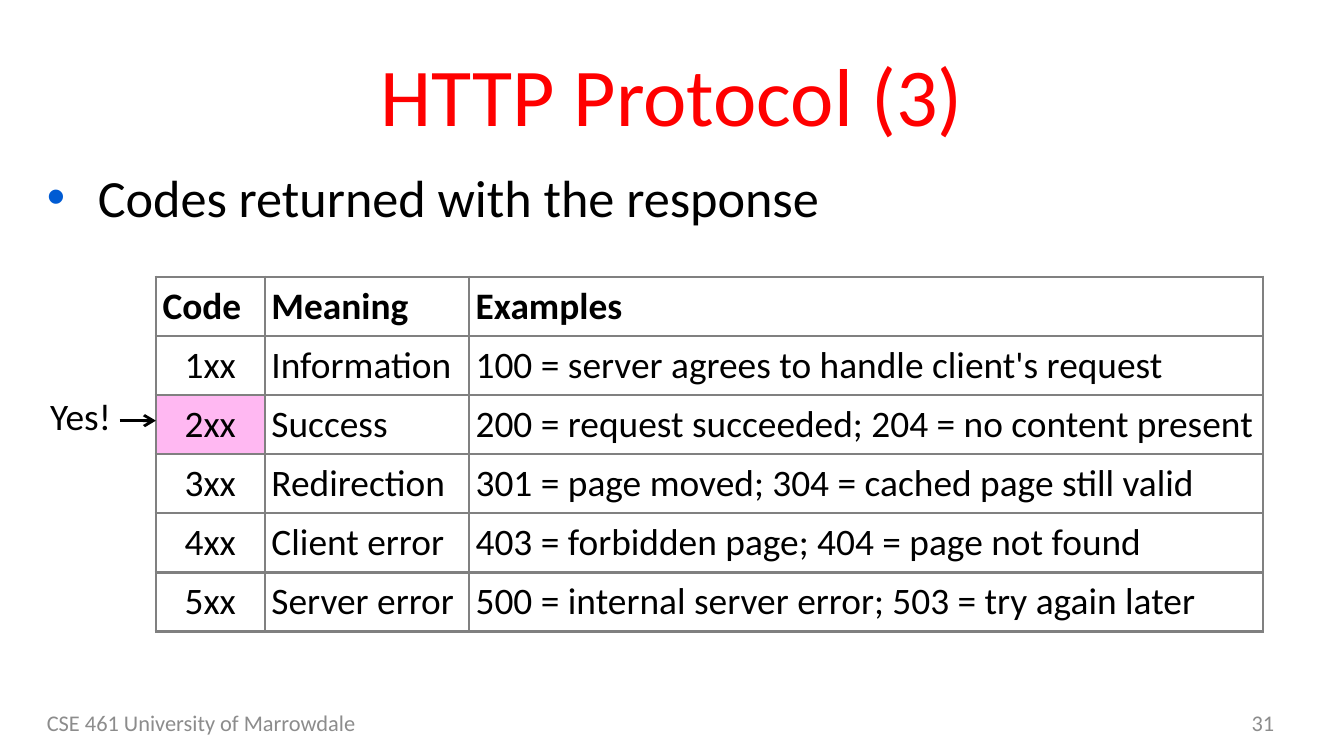
import pptx
import pptx.dml.color
import pptx.enum.shapes
import pptx.enum.text
import pptx.oxml
import pptx.oxml.ns
import pptx.util

Inches = pptx.util.Inches
Pt = pptx.util.Pt
RGBColor = pptx.dml.color.RGBColor
ALIGN = pptx.enum.text.PP_ALIGN
ANCHOR = pptx.enum.text.MSO_ANCHOR

FONT = "Calibri"
RED = RGBColor(0xFF, 0x00, 0x00)
BLACK = RGBColor(0x00, 0x00, 0x00)
GRAY = RGBColor(0x8C, 0x8C, 0x8C)
BULLET_BLUE = RGBColor(0x00, 0x5B, 0xD3)
BORDER_GRAY = RGBColor(0x80, 0x80, 0x80)
PINK = RGBColor(0xFF, 0xB8, 0xF2)

SLIDE_WIDTH = Inches(10)
SLIDE_HEIGHT = SLIDE_WIDTH * 9 // 16
COLUMN_WIDTHS = (0.81, 1.52, 5.91)
ROW_HEIGHT = 0.44
HIGHLIGHTED_CODE = "2xx"
RESPONSE_CODES = (
    ("Code", "Meaning", "Examples"),
    ("1xx", "Information", "100 = server agrees to handle client's request"),
    ("2xx", "Success", "200 = request succeeded; 204 = no content present"),
    ("3xx", "Redirection", "301 = page moved; 304 = cached page still valid"),
    ("4xx", "Client error", "403 = forbidden page; 404 = page not found"),
    ("5xx", "Server error", "500 = internal server error; 503 = try again later"),
)


def add_xml(parent, markup):
    """Append a DrawingML element to the parent."""
    root, rest = markup.split(" ", 1)
    parent.append(pptx.oxml.parse_xml(f"{root} {pptx.oxml.ns.nsdecls('a')} {rest}"))


def write(paragraph, text, size, color=BLACK, align=ALIGN.LEFT, bold=False):
    """Add one formatted run to a paragraph."""
    paragraph.alignment = align
    run = paragraph.add_run()
    run.text = text
    run.font.name = FONT
    run.font.size = Pt(size)
    run.font.bold = bold
    run.font.color.rgb = color


def add_text(slide, box, text, size, color=BLACK, align=ALIGN.LEFT, anchor=ANCHOR.MIDDLE):
    """Place a wrapped text box and return its paragraph."""
    frame = slide.shapes.add_textbox(*map(Inches, box)).text_frame
    frame.word_wrap = True
    frame.vertical_anchor = anchor
    paragraph = frame.paragraphs[0]
    write(paragraph, text, size, color, align)
    return paragraph


def add_body(slide, box):
    """Place the bulleted statement."""
    statement = add_text(slide, box, "Codes returned with the response", 28, anchor=ANCHOR.TOP)
    statement.space_before = Pt(6)
    properties = statement._p.get_or_add_pPr()
    properties.set("marL", str(Inches(0.38)))
    properties.set("indent", str(Inches(-0.38)))
    add_xml(properties, f'<a:buClr ><a:srgbClr val="{BULLET_BLUE}"/></a:buClr>')
    add_xml(properties, '<a:buFont typeface="Arial"/>')
    add_xml(properties, '<a:buChar char="•"/>')


def format_cell(cell, fill_color):
    """Set the margins, borders and fill of a table cell."""
    cell.margin_left = cell.margin_right = Inches(0.05)
    cell.margin_top = cell.margin_bottom = Inches(0.05)
    cell.vertical_anchor = ANCHOR.MIDDLE
    properties = cell._tc.get_or_add_tcPr()
    for side in "LRTB":
        add_xml(properties, f'<a:ln{side} w="{Pt(1.5)}"><a:solidFill>'
                            f'<a:srgbClr val="{BORDER_GRAY}"/></a:solidFill></a:ln{side}>')
    if fill_color is None:
        cell.fill.background()
    else:
        cell.fill.solid()
        cell.fill.fore_color.rgb = fill_color


def add_code_table(slide, left, top):
    """Place the table of response codes."""
    table = slide.shapes.add_table(
        len(RESPONSE_CODES), len(COLUMN_WIDTHS), Inches(left), Inches(top),
        Inches(sum(COLUMN_WIDTHS)), Inches(ROW_HEIGHT * len(RESPONSE_CODES))).table
    table.horz_banding = False
    table.first_row = False
    for column, width in zip(table.columns, COLUMN_WIDTHS):
        column.width = Inches(width)
    for row_index, entries in enumerate(RESPONSE_CODES):
        table.rows[row_index].height = Inches(ROW_HEIGHT)
        is_header = row_index == 0
        for column_index, text in enumerate(entries):
            cell = table.cell(row_index, column_index)
            is_code = column_index == 0 and not is_header
            write(cell.text_frame.paragraphs[0], text, 20,
                  align=ALIGN.CENTER if is_code else ALIGN.LEFT, bold=is_header)
            format_cell(cell, PINK if text == HIGHLIGHTED_CODE else None)


def add_callout(slide, left, top, width, height):
    """Place the label and the arrow pointing at the success code."""
    label = add_text(slide, (left, top, width, height), "Yes!", 20,
                     align=ALIGN.CENTER, anchor=ANCHOR.TOP)
    label.line_spacing = 0.8
    middle = Inches(top + height / 2)
    arrow = slide.shapes.add_connector(
        pptx.enum.shapes.MSO_CONNECTOR.STRAIGHT,
        Inches(left + 0.72), middle, Inches(left + 0.99), middle)
    arrow.line.color.rgb = BLACK
    arrow.line.width = Pt(1.5)
    add_xml(arrow.line._get_or_add_ln(), '<a:tailEnd type="arrow"/>')
    add_xml(arrow._element.spPr, "<a:effectLst />")


def add_footer(slide, left, top, width, height):
    """Place the course name and the page number."""
    add_text(slide, (left, top, 3.17, height), "CSE 461 University of Marrowdale", 12, GRAY)
    number_width = 2.33
    add_text(slide, (left + width - number_width, top, number_width, height),
             "31", 12, GRAY, ALIGN.RIGHT)


def main():
    """Build and save the slide."""
    presentation = pptx.Presentation()
    presentation.slide_width = SLIDE_WIDTH
    presentation.slide_height = SLIDE_HEIGHT
    slide = presentation.slides.add_slide(presentation.slide_layouts[6])
    add_text(slide, (0.25, 0.23, 9.5, 0.94), "HTTP Protocol (3)", 44, RED, ALIGN.CENTER)
    add_body(slide, (0.25, 1.18, 9.5, 3.71))
    add_footer(slide, 0.25, 5.23, 9.33, 0.3)
    add_code_table(slide, 1.16, 2.06)
    add_callout(slide, 0.17, 2.94, 0.86, 0.38)
    presentation.save("out.pptx")


if __name__ == "__main__":
    main()
